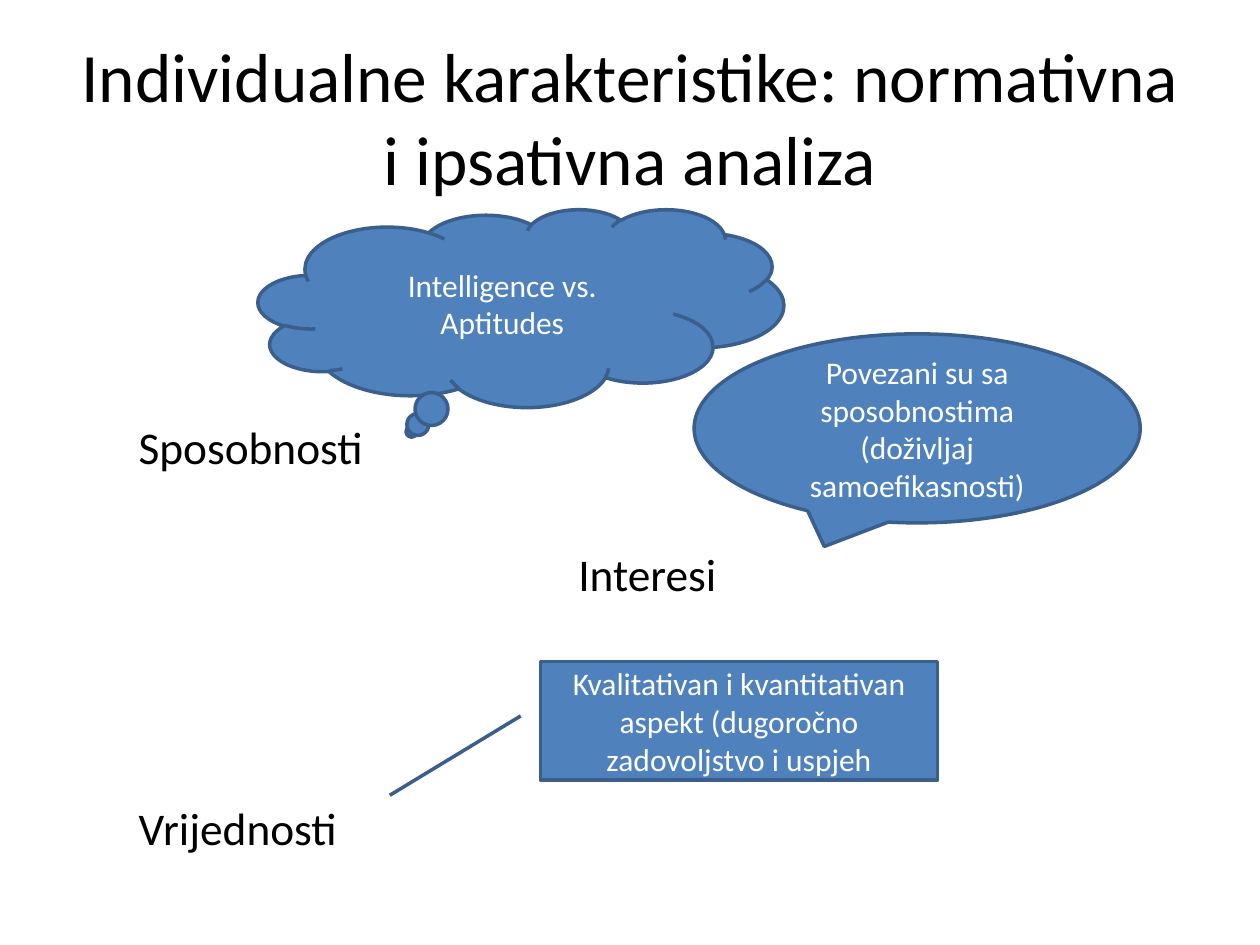
from pptx import Presentation
from pptx.dml.color import RGBColor
from pptx.enum.shapes import MSO_SHAPE
from pptx.enum.text import MSO_ANCHOR, MSO_AUTO_SIZE, PP_ALIGN
from pptx.util import Inches, Pt

TITLE = "Individualne karakteristike: normativna i ipsativna analiza"

# text, left edge, line of the list it stands on
LABELS = [
    ("Sposobnosti", 1.1, 0),
    ("Interesi", 4.59, 2),
    ("Vrijednosti", 1.1, 6),
]
FIRST_LINE_TOP = 3.32
LINE_PITCH = 0.505

# text, preset shape, (left, top, width, height), adjustments
CALLOUTS = [
    ("Intelligence vs. Aptitudes",
     MSO_SHAPE.CLOUD_CALLOUT, (2.05, 1.66, 4.17, 1.57), ()),
    ("Povezani su sa sposobnostima (doživljaj samoefikasnosti)",
     MSO_SHAPE.OVAL_CALLOUT, (5.51, 2.65, 3.54, 1.5), ()),
    ("Kvalitativan i kvantitativan aspekt (dugoročno zadovoljstvo i uspjeh",
     MSO_SHAPE.LINE_CALLOUT_1, (4.29, 5.25, 3.15, 0.94),
     (0.46, -0.05, 1.13, -0.38)),
]


def color(hex_code):
    return RGBColor.from_string(hex_code)


def write(frame, text, size, hex_code, align):
    frame.word_wrap = True
    frame.auto_size = MSO_AUTO_SIZE.NONE
    frame.vertical_anchor = MSO_ANCHOR.MIDDLE
    para = frame.paragraphs[0]
    para.text = text
    para.alignment = align
    para.font.name = "Calibri"
    para.font.size = Pt(size)
    para.font.color.rgb = color(hex_code)


def add_title(page):
    title = page.shapes.title
    title.left, title.top = Inches(0.5), Inches(0.3)
    title.width, title.height = Inches(9), Inches(1.25)
    write(title.text_frame, TITLE, 39.6, "000000", PP_ALIGN.CENTER)


def add_label(page, text, left, line):
    top = FIRST_LINE_TOP + line * LINE_PITCH
    box = page.shapes.add_textbox(
        Inches(left), Inches(top), Inches(2.5), Inches(0.44))
    frame = box.text_frame
    frame.margin_left = frame.margin_right = 0
    frame.margin_top = frame.margin_bottom = 0
    write(frame, text, 25.9, "000000", PP_ALIGN.LEFT)


def add_callout(page, text, preset, place, adjustments):
    callout = page.shapes.add_shape(preset, *map(Inches, place))
    for index, value in enumerate(adjustments):
        callout.adjustments[index] = value
    callout.shadow.inherit = False
    callout.fill.solid()
    callout.fill.fore_color.rgb = color("4F81BD")
    callout.line.color.rgb = color("3A5F8C")
    callout.line.width = Pt(2)
    write(callout.text_frame, text, 18, "FFFFFF", PP_ALIGN.CENTER)


def main():
    deck = Presentation()
    deck.slide_width, deck.slide_height = Inches(10), Inches(7.5)
    page = deck.slides.add_slide(deck.slide_layouts.get_by_name("Title Only"))
    add_title(page)
    for label in LABELS:
        add_label(page, *label)
    for callout in CALLOUTS:
        add_callout(page, *callout)
    deck.save("out.pptx")


if __name__ == "__main__":
    main()
